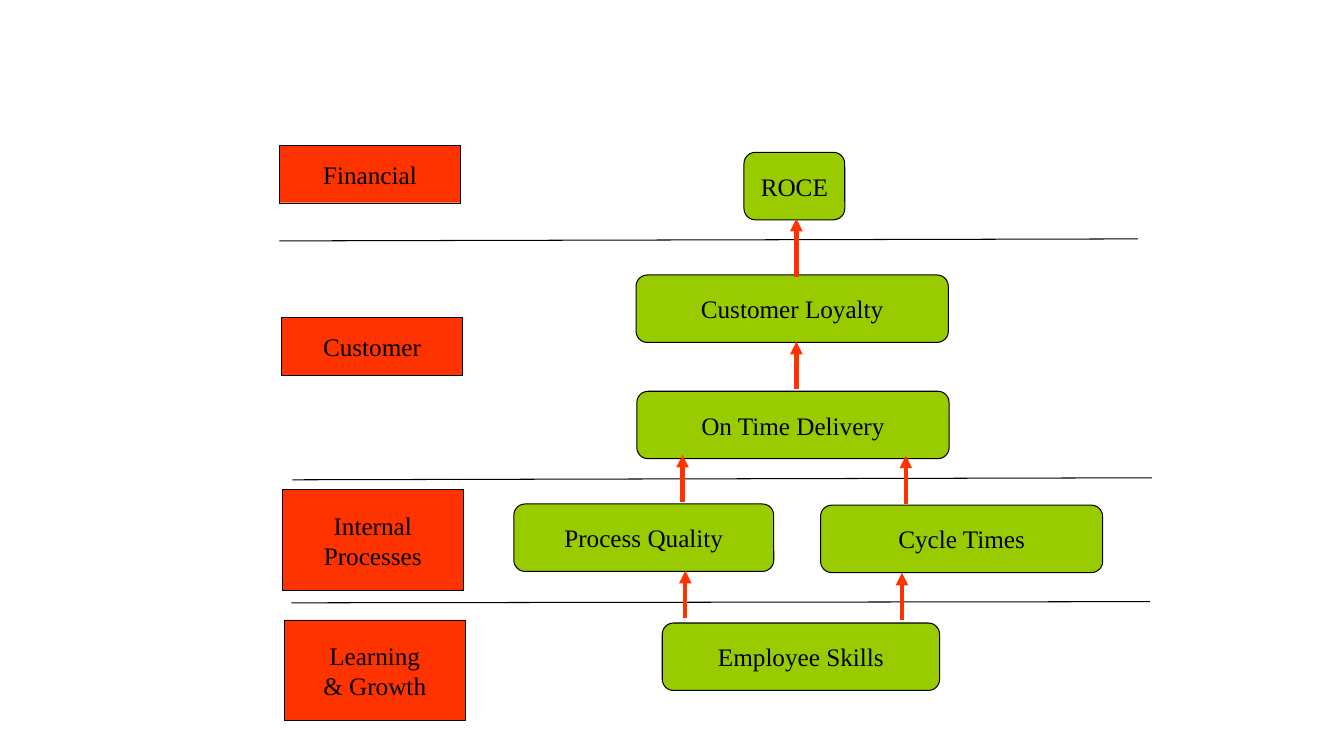
from lxml import etree
from pptx import Presentation
from pptx.dml.color import RGBColor
from pptx.enum.shapes import MSO_CONNECTOR, MSO_SHAPE
from pptx.enum.text import MSO_ANCHOR, PP_ALIGN
from pptx.oxml.ns import qn
from pptx.util import Cm, Pt

RECTANGLE = MSO_SHAPE.RECTANGLE
ROUNDED = MSO_SHAPE.FLOWCHART_ALTERNATE_PROCESS
STRAIGHT = MSO_CONNECTOR.STRAIGHT
MIDDLE = MSO_ANCHOR.MIDDLE
CENTER = PP_ALIGN.CENTER

BLACK = RGBColor(0x00, 0x00, 0x00)
GREEN = RGBColor(0x99, 0xCC, 0x00)
RED = RGBColor(0xFF, 0x33, 0x00)

FONT = "Times New Roman"
GOAL_HEIGHT = 1.7
PERSPECTIVE_WIDTH = 4.57

GOALS = [
    ("ROCE", 18.75, 3.84, 2.54),
    ("Customer Loyalty", 16.03, 6.93, 7.87),
    ("On Time Delivery", 16.05, 9.86, 7.87),
    ("Cycle Times", 20.68, 12.73, 7.11),
    ("Process Quality", 12.95, 12.7, 6.55),
    ("Employee Skills", 16.69, 15.7, 6.99),
]
DIVIDERS = [
    (7.04, 6.07, 28.68, 6.02),
    (7.37, 12.09, 29.03, 12.04),
    (7.34, 15.19, 28.98, 15.16),
]
PERSPECTIVES = [
    ("Financial", 7.04, 3.66, 1.45),
    ("Customer", 7.09, 8.0, 1.45),
    ("Internal\nProcesses", 7.11, 12.34, 2.54),
    ("Learning\n& Growth", 7.16, 15.62, 2.54),
]
ARROWS = [
    (20.07, 6.99, 5.51),
    (20.07, 9.8, 8.61),
    (17.2, 12.65, 11.46),
    (22.83, 12.7, 11.48),
    (17.27, 15.57, 14.38),
    (22.73, 15.62, 14.43),
]


def add_box(page, kind, text, left, top, width, height, fill, line_width):
    box = page.shapes.add_shape(kind, Cm(left), Cm(top), Cm(width), Cm(height))
    box.shadow.inherit = False
    box.fill.solid()
    box.fill.fore_color.rgb = fill
    box.line.color.rgb = BLACK
    box.line.width = Pt(line_width)
    frame = box.text_frame
    frame.text = text
    frame.word_wrap = False
    frame.vertical_anchor = MIDDLE
    for para in frame.paragraphs:
        para.alignment = CENTER
        for span in para.runs:
            span.font.name = FONT
            span.font.size = Pt(18)
            span.font.color.rgb = BLACK


def add_line(page, start_x, start_y, end_x, end_y, color, width):
    line = page.shapes.add_connector(
        STRAIGHT, Cm(start_x), Cm(start_y), Cm(end_x), Cm(end_y)
    )
    line.line.color.rgb = color
    line.line.width = Pt(width)
    etree.SubElement(line._element.spPr, qn("a:effectLst"))
    return line


def add_arrow(page, x, bottom, top):
    arrow = add_line(page, x, bottom, x, top, RED, 3)
    outline = arrow.line._get_or_add_ln()
    etree.SubElement(outline, qn("a:tailEnd"), type="triangle")


def main():
    deck = Presentation()
    deck.slide_width = Cm(33.87)
    deck.slide_height = Cm(19.05)
    page = deck.slides.add_slide(deck.slide_layouts[6])
    for text, left, top, width in GOALS:
        add_box(page, ROUNDED, text, left, top, width, GOAL_HEIGHT, GREEN, 0.75)
    for ends in DIVIDERS:
        add_line(page, *ends, BLACK, 0.75)
    for text, left, top, height in PERSPECTIVES:
        add_box(page, RECTANGLE, text, left, top, PERSPECTIVE_WIDTH, height, RED, 0.25)
    for x, bottom, top in ARROWS:
        add_arrow(page, x, bottom, top)
    deck.save("out.pptx")


if __name__ == "__main__":
    main()
